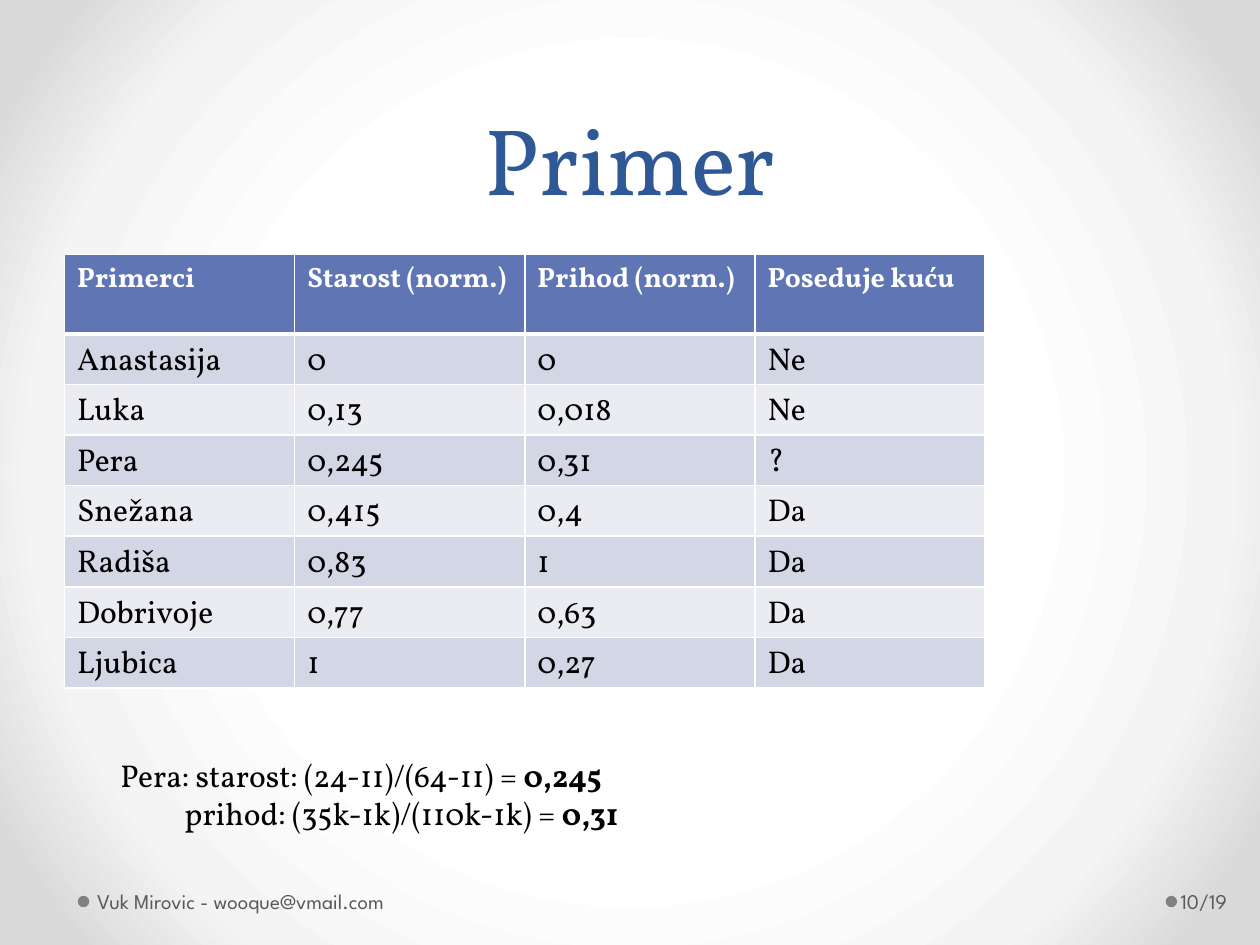
from lxml.etree import fromstring
from pptx import Presentation
from pptx.dml.color import RGBColor
from pptx.enum.shapes import MSO_SHAPE
from pptx.enum.text import MSO_ANCHOR as Anchor, PP_ALIGN as Align
from pptx.oxml.ns import qn
from pptx.util import Cm, Pt

NS = 'xmlns:a="http://schemas.openxmlformats.org/drawingml/2006/main"'
SERIF, SANS = "Vollkorn", "League Spartan"


def style(run, size, color, face=SERIF, bold=False):
    font = run.font
    font.size, font.name, font.bold = Pt(size), face, bold
    font.color.rgb = RGBColor.from_string(color)


def add_box(left, top, width, height, anchor=Anchor.TOP):
    """Add a wrapping text box, measured in centimetres, and return its frame."""
    box = slide.shapes.add_textbox(Cm(left), Cm(top), Cm(width), Cm(height))
    frame = box.text_frame
    frame.word_wrap, frame.vertical_anchor = True, anchor
    return frame


deck = Presentation()
deck.slide_width, deck.slide_height = Cm(25.4), Cm(19.05)
slide = deck.slides.add_slide(deck.slide_layouts[6])

# Background: white centre fading to grey corners
fill = slide.background.fill
fill.gradient()
grad = slide.element.find(".//" + qn("a:gradFill"))
for part in list(grad):
    grad.remove(part)
stops = "".join(
    f'<a:gs pos="{pos}000"><a:srgbClr val="{color}"/></a:gs>'
    for pos, color in [(50, "FFFFFF"), (76, "F4F4F4"), (92, "DADADA")])
grad.append(fromstring(f"<a:gsLst {NS}>{stops}</a:gsLst>"))
grad.append(fromstring(
    f'<a:path {NS} path="circle">'
    '<a:fillToRect l="50000" t="50000" r="50000" b="50000"/></a:path>'))

# Title
title = add_box(1.27, 0, 22.86, 4.45, Anchor.BOTTOM)
title.text = "Primer"
para = title.paragraphs[0]
para.alignment, para.line_spacing = Align.CENTER, Pt(58)
style(para.runs[0], 54, "2F5897")

# Footer: a dot before each text
footer = [
    (1.57, 1.83, 7.9, 0.13, 0.25, "Vuk Mirovic - wooque@vmail.com"),
    (23.5, 23.72, 1.55, 0.08, 0.13, "10/19"),
]
for spot, left, width, start, end, text in footer:
    dot = slide.shapes.add_shape(
        MSO_SHAPE.OVAL, Cm(spot), Cm(18.06), Cm(0.23), Cm(0.23))
    dot.shadow.inherit = False
    dot.fill.solid()
    dot.fill.fore_color.rgb = RGBColor.from_string("808080")
    dot.line.fill.background()
    frame = add_box(left, 17.65, width, 1.02, Anchor.MIDDLE)
    frame.margin_left, frame.margin_right = Cm(start), Cm(end)
    frame.text = text
    style(frame.paragraphs[0].runs[0], 12, "595959", SANS)

# Table
rows = [
    ("Primerci", "Starost (norm.)", "Prihod (norm.)", "Poseduje kuću"),
    ("Anastasija", "0", "0", "Ne"),
    ("Luka", "0,13", "0,018", "Ne"),
    ("Pera", "0,245", "0,31", "?"),
    ("Snežana", "0,415", "0,4", "Da"),
    ("Radiša", "0,83", "1", "Da"),
    ("Dobrivoje", "0,77", "0,63", "Da"),
    ("Ljubica", "1", "0,27", "Da"),
]
table = slide.shapes.add_table(
    len(rows), 4, Cm(1.3), Cm(5.13), Cm(18.56), Cm(8.84)).table
for col in table.columns:
    col.width = Cm(4.64)
for i, row in enumerate(rows):
    table.rows[i].height = Cm(1.02 if i else 1.6)
    shade = ("EAECF2" if i % 2 == 0 else "D2D6E5") if i else "6076B4"
    size, color = (18, "000000") if i else (16, "FFFFFF")
    edges = {"L": 1, "R": 1, "T": 3 if i == 1 else 1, "B": 1 if i else 3}
    for j, text in enumerate(row):
        cell = table.cell(i, j)
        cell.text = text
        style(cell.text_frame.paragraphs[0].runs[0], size, color, bold=i == 0)
        cell.fill.solid()
        cell.fill.fore_color.rgb = RGBColor.from_string(shade)
        props = cell.fill._xPr
        for k, (side, width) in enumerate(edges.items()):
            props.insert(k, fromstring(
                f'<a:ln{side} {NS} w="{Pt(width)}"><a:solidFill>'
                f'<a:srgbClr val="FFFFFF"/></a:solidFill></a:ln{side}>'))

# Worked example: the second line is indented under the first
notes = add_box(2.18, 15.11, 18.82, 1.8)
sums = [
    ("Pera: starost: (24-11)/(64-11) = ", "0,245", 0),
    ("prihod: (35k-1k)/(110k-1k) = ", "0,31", 1.29),
]
for i, (lead, result, indent) in enumerate(sums):
    para = notes.add_paragraph() if i else notes.paragraphs[0]
    para.text = lead
    para.add_run().text = result
    para._p.get_or_add_pPr().set("marL", str(Cm(indent)))
    for run, bold in zip(para.runs, (False, True)):
        style(run, 18, "000000", bold=bold)

deck.save("out.pptx")
